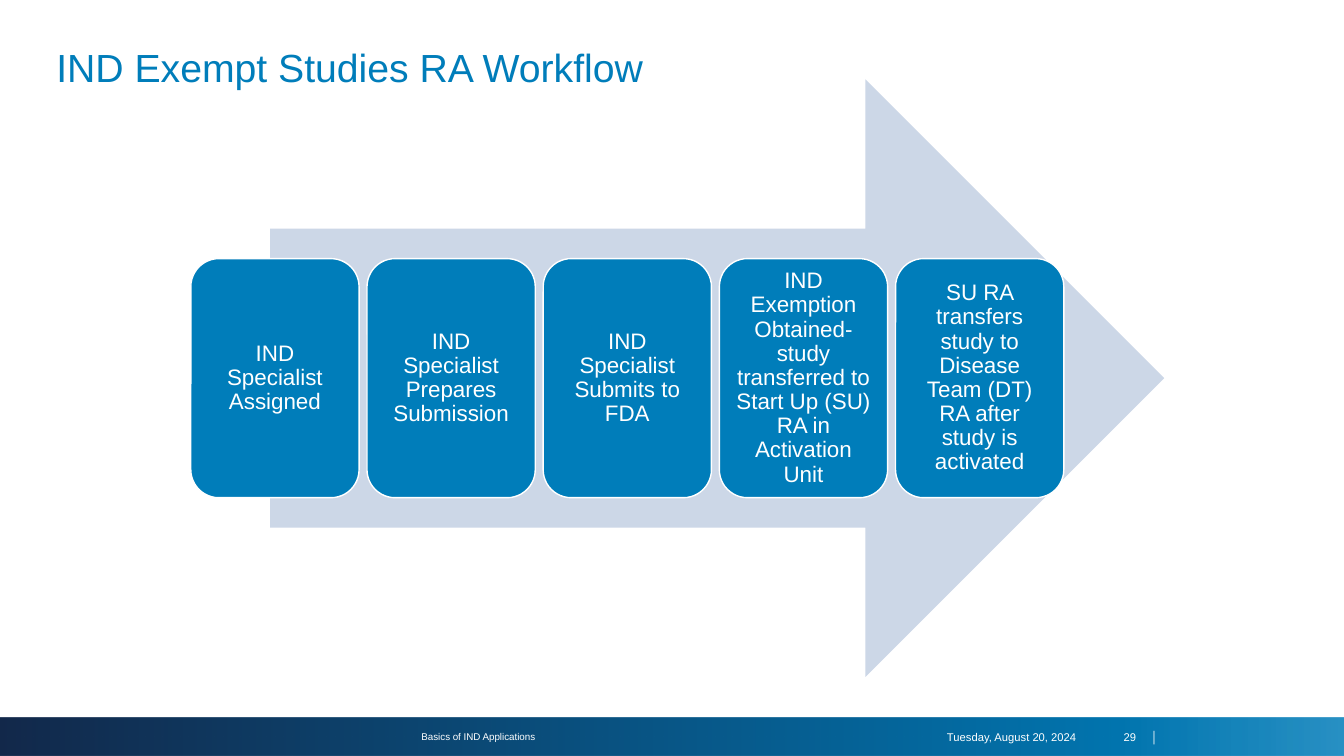
from dataclasses import dataclass

from lxml.etree import SubElement
from pptx import Presentation
from pptx.dml.color import RGBColor
from pptx.enum.shapes import MSO_SHAPE as Preset
from pptx.enum.text import MSO_ANCHOR as Anchor, MSO_AUTO_SIZE as AutoSize, PP_ALIGN as Align
from pptx.oxml.ns import qn
from pptx.util import Cm, Pt


@dataclass(frozen=True)
class Theme:
    font: str = "Arial"
    blue: str = "007DBA"
    mid_blue: str = "0275AF"
    navy: str = "13294B"
    pale: str = "CCD7E7"
    white: str = "FFFFFF"
    title_size: int = 28
    step_size: int = 16
    date_size: int = 8
    footer_size: int = 7


THEME = Theme()
STEPS = [
    "IND Specialist Assigned",
    "IND Specialist Prepares Submission",
    "IND Specialist Submits to FDA",
    "IND Exemption Obtained- study transferred to Start Up (SU) RA in Activation Unit",
    "SU RA transfers study to Disease Team (DT) RA after study is activated",
]


def write_text(shape, text, size, color=THEME.white, align=Align.LEFT, anchor=Anchor.MIDDLE,
               line_spacing=1.0, inset=(0.25, 0.13), tab=None):
    """Fill the shape with one paragraph; inset is (sides, top and bottom) and tab a stop, in cm."""
    frame = shape.text_frame
    frame.word_wrap = True
    frame.auto_size = AutoSize.NONE
    frame.vertical_anchor = anchor
    frame.margin_left = frame.margin_right = Cm(inset[0])
    frame.margin_top = frame.margin_bottom = Cm(inset[1])
    paragraph = frame.paragraphs[0]
    paragraph.alignment = align
    paragraph.line_spacing = line_spacing
    if tab:
        tabs = SubElement(paragraph._p.get_or_add_pPr(), qn("a:tabLst"))
        SubElement(tabs, qn("a:tab"), pos=str(Cm(tab)), algn="l")
    run = paragraph.add_run()
    run.text = text
    run.font.name = THEME.font
    run.font.size = Pt(size)
    run.font.color.rgb = RGBColor.from_string(color)


def add_box(slide, preset, left, top, width, height, fill, line=None):
    shape = slide.shapes.add_shape(preset, Cm(left), Cm(top), Cm(width), Cm(height))
    shape.shadow.inherit = False
    shape.fill.solid()
    shape.fill.fore_color.rgb = RGBColor.from_string(fill)
    if line:
        shape.line.color.rgb = RGBColor.from_string(line)
        shape.line.width = Pt(1)
    else:
        shape.line.fill.background()
    return shape


def add_label(slide, text, left, top, width, height, **text_format):
    label = slide.shapes.add_textbox(Cm(left), Cm(top), Cm(width), Cm(height))
    write_text(label, text, **text_format)


def paint_gradient(shape, stops):
    """Fill from left to right with (position, colour, opacity) stops, in percent."""
    shape.fill.gradient()
    shape.fill.gradient_angle = 0
    stop_list = shape._element.spPr.find(qn("a:gradFill")).find(qn("a:gsLst"))
    for old_stop in list(stop_list):
        stop_list.remove(old_stop)
    for position, color, opacity in stops:
        stop = SubElement(stop_list, qn("a:gs"), pos=str(position * 1000))
        tone = SubElement(stop, qn("a:srgbClr"), val=color)
        if opacity < 100:
            SubElement(tone, qn("a:alpha"), val=str(opacity * 1000))


def place_title(slide, left, top, width, height):
    title = slide.shapes.title
    title.left, title.top, title.width, title.height = Cm(left), Cm(top), Cm(width), Cm(height)
    write_text(title, "IND Exempt Studies RA Workflow", THEME.title_size, THEME.blue,
               line_spacing=0.9)


def draw_footer(slide, left, top, width, height):
    band = add_box(slide, Preset.RECTANGLE, left, top, width, height, THEME.blue)
    paint_gradient(band, [(0, THEME.navy, 100), (83, THEME.mid_blue, 100), (100, THEME.blue, 84)])
    text_top, text_height = top + 0.2, 0.58
    add_label(slide, "Basics of IND Applications", left + 1.17, text_top, 21.77, text_height,
              size=THEME.footer_size, align=Align.CENTER, anchor=Anchor.TOP)
    add_label(slide, "Tuesday, August 20, 2024", left + 23.32, text_top, 4.06, text_height,
              size=THEME.date_size, align=Align.RIGHT)
    add_label(slide, "29\t│", left + 28.07, text_top, 1.7, text_height,
              size=THEME.date_size, tab=0.69)


def draw_workflow(slide, left, top, width, height):
    """Lay the steps in a row across an arrow that starts behind the first one."""
    arrow_indent, step_width, pitch = 2.0, 4.24, 4.44
    step_height = height * 0.4
    add_box(slide, Preset.RIGHT_ARROW, left + arrow_indent, top, width - arrow_indent, height,
            THEME.pale)
    for index, text in enumerate(STEPS):
        step = add_box(slide, Preset.ROUNDED_RECTANGLE, left + index * pitch,
                       top + (height - step_height) / 2, step_width, step_height,
                       THEME.blue, THEME.white)
        write_text(step, text, THEME.step_size, align=Align.CENTER, line_spacing=0.9,
                   inset=(0.17, 0.17))


def main():
    presentation = Presentation()
    presentation.slide_width, presentation.slide_height = Cm(33.87), Cm(19.05)
    slide = presentation.slides.add_slide(presentation.slide_layouts[5])
    draw_footer(slide, 0, 18.09, 33.87, 0.96)
    place_title(slide, 1.17, 1.07, 31.55, 1.37)
    draw_workflow(slide, 4.81, 2, 24.53, 15.06)
    presentation.save("out.pptx")


if __name__ == "__main__":
    main()
